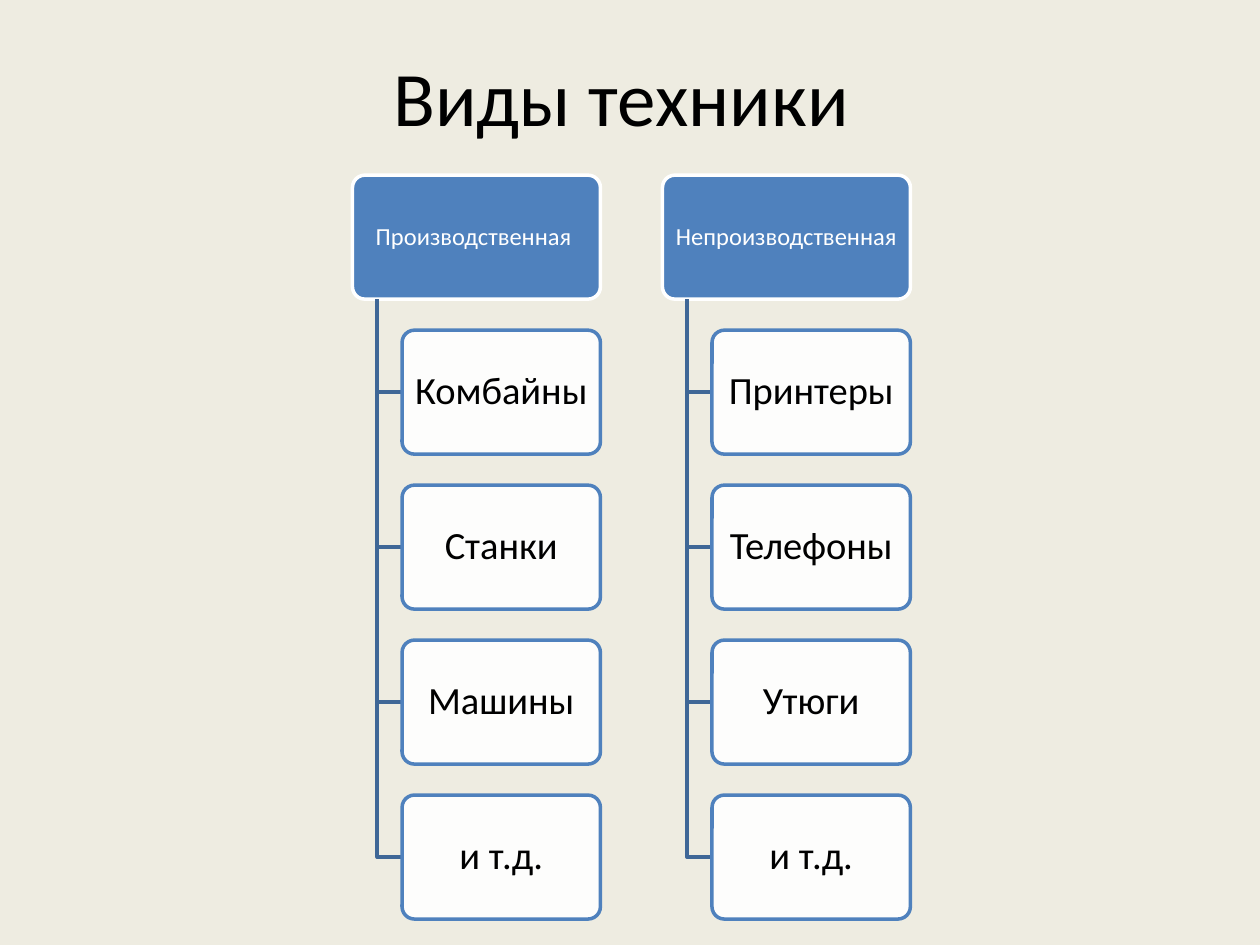
from lxml.etree import SubElement
from pptx import Presentation
from pptx.dml.color import RGBColor
from pptx.enum.shapes import MSO_SHAPE as Shape
from pptx.enum.text import MSO_ANCHOR as Anchor, PP_ALIGN as Align
from pptx.oxml.ns import qn
from pptx.util import Pt

TITLE = "Виды техники "
BRANCHES = [
    ("Производственная ", ["Комбайны", "Станки", "Машины", "и т.д."]),
    ("Непроизводственная", ["Принтеры", "Телефоны", "Утюги", "и т.д."]),
]

FONT = "Calibri"
BEIGE = RGBColor(0xEE, 0xEC, 0xE1)
BLUE = RGBColor(0x4F, 0x81, 0xBD)
DARK_BLUE = RGBColor(0x3F, 0x67, 0x97)
WHITE = RGBColor(0xFF, 0xFF, 0xFF)
BLACK = RGBColor(0, 0, 0)

LEFT, TOP = 201.4, 100.1
BOX_HEIGHT = 70.85
HEAD_WIDTH = 2 * BOX_HEIGHT
ITEM_WIDTH = 0.8 * HEAD_WIDTH
ITEM_INDENT = HEAD_WIDTH - ITEM_WIDTH
STEM_INDENT = ITEM_INDENT / 2
COLUMN_STEP = 2.5 * BOX_HEIGHT
ROW_STEP = 1.25 * BOX_HEIGHT


def format_text(frame, text, size, color):
    frame.text = text
    frame.word_wrap = True
    frame.vertical_anchor = Anchor.MIDDLE
    para = frame.paragraphs[0]
    para.alignment = Align.CENTER
    para.font.name = FONT
    para.font.size = Pt(size)
    para.font.color.rgb = color
    return para


def add_box(page, text, left, top, width, fill, line, size, color, inset):
    box = page.shapes.add_shape(
        Shape.ROUNDED_RECTANGLE, Pt(left), Pt(top), Pt(width), Pt(BOX_HEIGHT))
    box.adjustments[0] = 0.1
    box.shadow.inherit = False
    box.fill.solid()
    box.fill.fore_color.rgb = fill
    box.line.color.rgb = line
    box.line.width = Pt(2)
    frame = box.text_frame
    frame.margin_left = frame.margin_right = Pt(inset)
    frame.margin_top = frame.margin_bottom = Pt(inset * 0.6)
    format_text(frame, text, size, color).line_spacing = 0.9
    return box


def add_elbow(page, left, top, right, bottom):
    builder = page.shapes.build_freeform(Pt(left), Pt(top))
    builder.add_line_segments(
        [(Pt(left), Pt(bottom)), (Pt(right), Pt(bottom))], close=False)
    elbow = builder.convert_to_shape()
    elbow.shadow.inherit = False
    elbow.fill.background()
    elbow.line.color.rgb = DARK_BLUE
    elbow.line.width = Pt(2)


def add_branch(page, left, heading, items):
    add_box(page, heading, left, TOP, HEAD_WIDTH, BLUE, WHITE, 14, WHITE, 2)
    item_left = left + ITEM_INDENT
    for row, item in enumerate(items, 1):
        top = TOP + row * ROW_STEP
        add_elbow(page, left + STEM_INDENT, TOP + BOX_HEIGHT,
                  item_left, top + BOX_HEIGHT / 2)
        box = add_box(page, item, item_left, top, ITEM_WIDTH,
                      WHITE, BLUE, 22, BLACK, 3.5)
        fill_color = box.fill._xPr.find(qn("a:solidFill"))[0]
        SubElement(fill_color, qn("a:alpha"), val="90000")


def main():
    deck = Presentation()
    deck.slide_width, deck.slide_height = Pt(720), Pt(540)
    page = deck.slides.add_slide(deck.slide_layouts[5])
    page.background.fill.solid()
    page.background.fill.fore_color.rgb = BEIGE

    title = page.shapes.title
    title.left, title.top, title.width, title.height = (
        Pt(36), Pt(15), Pt(648), Pt(79))
    format_text(title.text_frame, TITLE, 44, BLACK)

    for column, (heading, items) in enumerate(BRANCHES):
        add_branch(page, LEFT + column * COLUMN_STEP, heading, items)

    deck.save("out.pptx")


if __name__ == "__main__":
    main()
